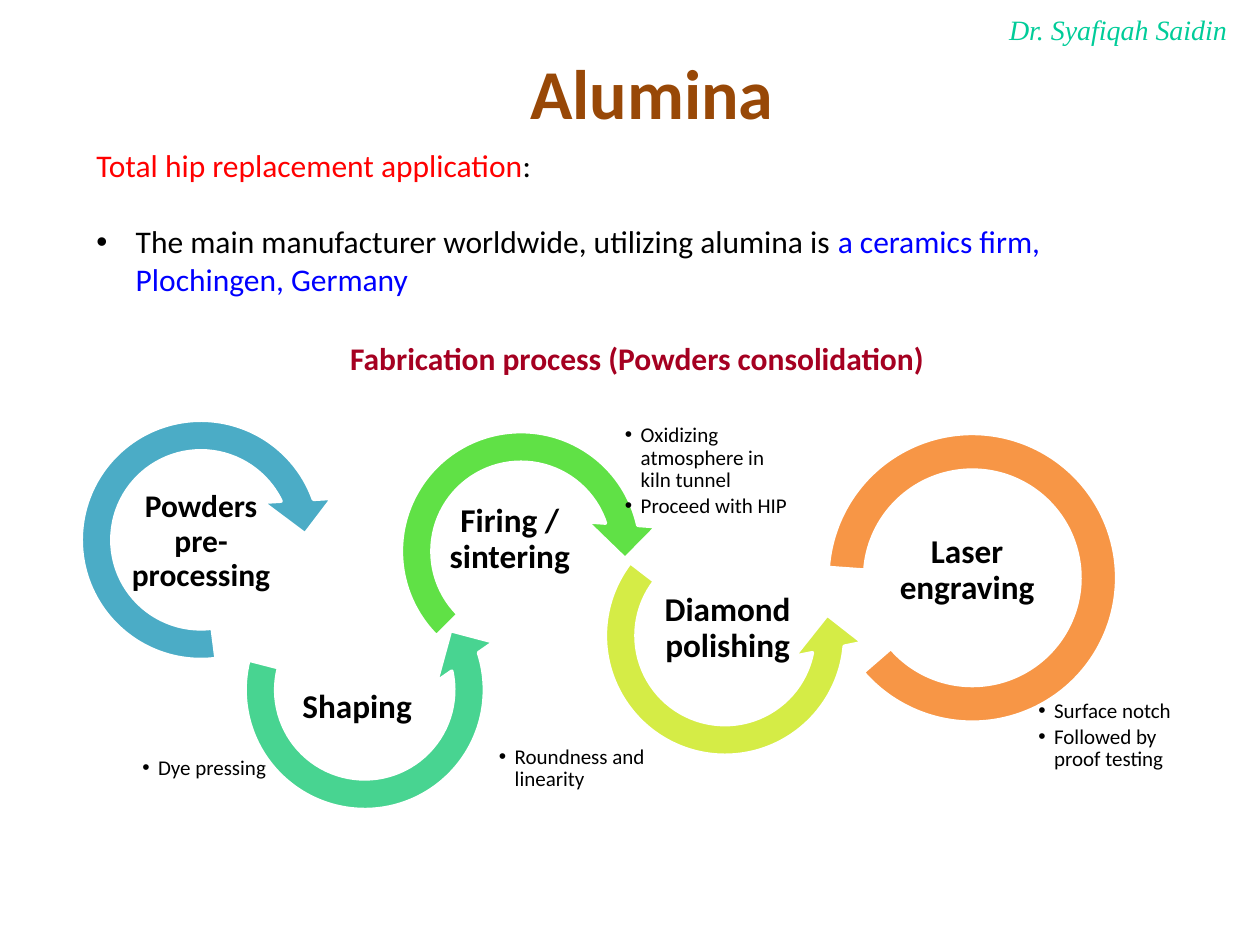
from collections import namedtuple

from lxml import etree
from pptx import Presentation
from pptx import util as u
from pptx.dml.color import RGBColor
from pptx.enum import shapes, text
from pptx.oxml.ns import qn

BLACK = RGBColor(0x00, 0x00, 0x00)
WHITE = RGBColor(0xFF, 0xFF, 0xFF)
BROWN = RGBColor(0x98, 0x48, 0x07)
MINT = RGBColor(0x00, 0xCC, 0x99)
RED = RGBColor(0xFF, 0x00, 0x00)
BLUE = RGBColor(0x00, 0x00, 0xFF)
CRIMSON = RGBColor(0xA5, 0x00, 0x21)
TEAL = RGBColor(0x4B, 0xAC, 0xC6)
SEA_GREEN = RGBColor(0x48, 0xD4, 0x91)
GREEN = RGBColor(0x60, 0xE1, 0x46)
LIME = RGBColor(0xD5, 0xEC, 0x46)
ORANGE = RGBColor(0xF7, 0x96, 0x46)

Box = namedtuple("Box", "left top width height")
# Ring, label and note positions are offsets from the diagram's corner
Stage = namedtuple("Stage", "preset adjust angle color size ring label_at label label_size note_at notes")

RIGHT_ARROW = shapes.MSO_SHAPE.CIRCULAR_ARROW
LEFT_ARROW = shapes.MSO_SHAPE.LEFT_CIRCULAR_ARROW
ARC = shapes.MSO_SHAPE.BLOCK_ARC
LEFT_TURN = (0.11, 11.42, 63, 189, 0.125)

STAGES = [
    Stage(RIGHT_ARROW, (0.11, 11.42, 45, 108, 0.125), 262.7, TEAL, 159, (0, 0),
          (35.3, 58.3), "Powders pre-processing", 18, None, []),
    Stage(LEFT_ARROW, LEFT_TURN, 239.4, SEA_GREEN, 159, (93.6, 85.7),
          (124.5, 153.3), "Shaping", 19, (45.3, 178.6), ["Dye pressing"]),
    Stage(RIGHT_ARROW, (0.11, 11.42, 45, 135, 0.125), 270, GREEN, 159, (182.9, 6.5),
          (211.7, 56.9), "Firing / sintering", 19, (321.1, 8.6),
          ["Oxidizing atmosphere in kiln tunnel", "Proceed with HIP"]),
    Stage(LEFT_ARROW, LEFT_TURN, 262.6, LIME, 159, (299.5, 54.7),
          (336.2, 108), "Diamond polishing", 19, (249.1, 178.6), ["Roundness and linearity"]),
    Stage(ARC, (135, 108, 0.127), 319.1, ORANGE, 165, (437.8, 18.7),
          (473, 75), "Laser engraving", 19, (557.3, 159.8),
          ["Surface notch", "Followed by proof testing"]),
]


def add_run(paragraph, words, size, color, bold=False, italic=False, font="Calibri"):
    run = paragraph.add_run()
    run.text = words
    run.font.name = font
    run.font.size = u.Pt(size)
    run.font.bold = bold
    run.font.italic = italic
    run.font.color.rgb = color


def add_frame(slide, box, wrap=True):
    frame = slide.shapes.add_textbox(*map(u.Pt, box)).text_frame
    frame.word_wrap = wrap
    return frame


def add_stage_frame(slide, box):
    frame = add_frame(slide, box)
    frame.vertical_anchor = text.MSO_ANCHOR.MIDDLE
    frame.margin_left = frame.margin_right = u.Pt(0.7)
    frame.margin_top = frame.margin_bottom = u.Pt(0.7)
    return frame


def set_bullet(paragraph, indent):
    props = paragraph._p.get_or_add_pPr()
    props.set("marL", str(u.Pt(indent)))
    props.set("indent", str(-u.Pt(indent)))
    etree.SubElement(props, qn("a:buFont")).set("typeface", "Arial")
    etree.SubElement(props, qn("a:buChar")).set("char", "•")


def add_heading(slide, box, words, size, color, **style):
    add_run(add_frame(slide, box, wrap=False).paragraphs[0], words, size, color, **style)


def add_application(slide, box):
    frame = add_frame(slide, box)
    topic = frame.paragraphs[0]
    add_run(topic, "Total hip replacement application", 18, RED)
    add_run(topic, ":", 18, BLACK)
    maker = frame.add_paragraph()
    set_bullet(maker, 22.5)
    maker.space_before = u.Pt(22)
    add_run(maker, "The main manufacturer worldwide, utilizing alumina is ", 18, BLACK)
    add_run(maker, "a ceramics firm, Plochingen, Germany", 18, BLUE)


def add_stage(slide, stage, left, top):
    def placed(offset, width, height):
        return Box(left + offset[0], top + offset[1], width, height)

    # Ring
    ring = slide.shapes.add_shape(
        stage.preset, *map(u.Pt, placed(stage.ring, stage.size, stage.size)))
    for index, value in enumerate(stage.adjust):
        ring.adjustments[index] = value
    ring.rotation = stage.angle
    ring.shadow.inherit = False
    ring.fill.solid()
    ring.fill.fore_color.rgb = stage.color
    ring.line.color.rgb = WHITE
    ring.line.width = u.Pt(2)

    # Details beside the ring
    if stage.notes:
        frame = add_stage_frame(slide, placed(stage.note_at, 95, 63.4))
        for index, words in enumerate(stage.notes):
            note = frame.add_paragraph() if index else frame.paragraphs[0]
            set_bullet(note, 9)
            note.line_spacing = 0.9
            note.space_after = u.Pt(1.8)
            add_run(note, words, 12, BLACK)

    # Name inside the ring
    name = add_stage_frame(slide, placed(stage.label_at, 88.6, 44.6)).paragraphs[0]
    name.alignment = text.PP_ALIGN.CENTER
    name.line_spacing = 0.9
    name.space_after = u.Pt(0.35 * stage.label_size)
    add_run(name, stage.label, stage.label_size, BLACK, bold=True)


def add_process(slide, left, top):
    for stage in STAGES:
        add_stage(slide, stage, left, top)


def main():
    deck = Presentation()
    deck.slide_width, deck.slide_height = u.Pt(720), u.Pt(540)
    slide = deck.slides.add_slide(deck.slide_layouts[6])
    add_heading(slide, Box(296, 24.5, 155, 55.5), "Alumina", 40, BROWN, bold=True)
    add_heading(slide, Box(569.5, 3.6, 144.7, 26.6), "Dr. Syafiqah Saidin", 16, MINT,
                italic=True, font="Times New Roman")
    add_application(slide, Box(48, 80, 626, 94))
    add_process(slide, 35.3, 229)
    add_heading(slide, Box(193, 190, 360, 29), "Fabrication process (Powders consolidation)",
                18, CRIMSON, bold=True)
    deck.save("out.pptx")


if __name__ == "__main__":
    main()
